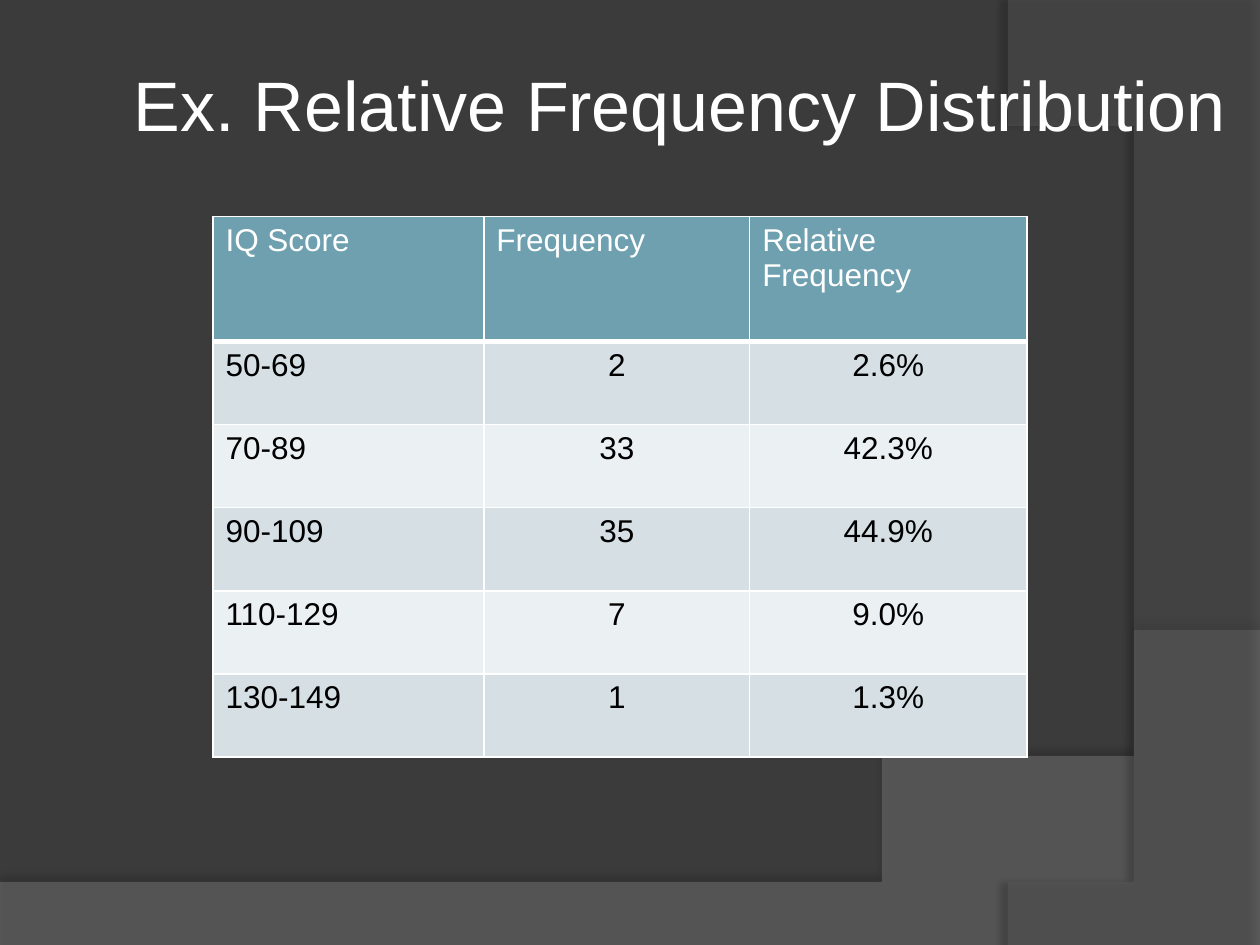
from dataclasses import dataclass

from pptx import Presentation
from pptx.dml.color import RGBColor
from pptx.enum.text import MSO_ANCHOR, MSO_AUTO_SIZE, PP_ALIGN
from pptx.oxml import parse_xml
from pptx.oxml.ns import nsdecls, qn
from pptx.util import Inches, Pt

Point = tuple[float, float]
FONT = "Arial"
WHITE, BLACK = "FFFFFF", "000000"
BACKGROUND = "3B3B3B"
HEADER_FILL = "6EA0B0"
BAND_FILLS = ("D5DFE4", "EBF0F2")
COLUMN_WIDTHS = (2.15, 2.11, 2.2)
HEADER_HEIGHT, ROW_HEIGHT = 0.99, 0.66
ROWS = (
    ("IQ Score", "Frequency", "Relative Frequency"),
    ("50-69", "2", "2.6%"),
    ("70-89", "33", "42.3%"),
    ("90-109", "35", "44.9%"),
    ("110-129", "7", "9.0%"),
    ("130-149", "1", "1.3%"),
)


@dataclass
class Swoosh:
    """A translucent area with one curved edge and a shadow along it."""
    before: list[Point]
    curve: tuple[Point, Point, Point, Point]
    fill: str
    opacity: int
    shadow_opacity: int
    shadow_distance: float
    shadow_angle: int


SWOOSHES = (
    Swoosh([(0, 7.51), (10, 7.51)],
           ((10, 5.2), (5.59, 7.29), (3.91, 7.19), (0, 7.05)),
           "7F7F7F", 45, 35, 3.5, 270),
    Swoosh([(10, 0.02), (10, 7.5)],
           ((8.21, 7.5), (9.35, 6.19), (10.18, 3), (8, 0)),
           "5E5E5E", 40, 45, 4, 180),
)


def rgb(color: str) -> RGBColor:
    return RGBColor.from_string(color)


def bezier(a: Point, b: Point, c: Point, d: Point, steps: int = 60) -> list[Point]:
    """Points along a cubic curve, both ends included."""
    points = []
    for i in range(steps + 1):
        t = i / steps
        u = 1 - t
        weights = (u**3, 3 * u * u * t, 3 * u * t * t, t**3)
        points.append(tuple(sum(w * p[axis] for w, p in zip(weights, (a, b, c, d)))
                            for axis in (0, 1)))
    return points


def add_swoosh(s, swoosh: Swoosh) -> None:
    start, *rest = swoosh.before + bezier(*swoosh.curve)
    builder = s.shapes.build_freeform(*start, scale=Inches(1))
    builder.add_line_segments(rest, close=True)
    sp = builder.convert_to_shape()
    sp.line.fill.background()
    sp.fill.solid()
    sp.fill.fore_color.rgb = rgb(swoosh.fill)
    color = sp.element.spPr.find(qn("a:solidFill"))[0]
    color.append(parse_xml(f'<a:alpha {nsdecls("a")} val="{swoosh.opacity * 1000}"/>'))
    sp.element.spPr.append(parse_xml(
        f'<a:effectLst {nsdecls("a")}><a:outerShdw blurRad="{Pt(4)}" '
        f'dist="{Pt(swoosh.shadow_distance)}" dir="{swoosh.shadow_angle * 60000}" '
        f'algn="ctr" rotWithShape="0"><a:srgbClr val="{BLACK}">'
        f'<a:alpha val="{swoosh.shadow_opacity * 1000}"/></a:srgbClr>'
        f'</a:outerShdw></a:effectLst>'))


def add_run(p, text: str, size: float, color: str) -> None:
    r = p.add_run()
    r.text = text
    r.font.name = FONT
    r.font.size = Pt(size)
    r.font.bold = False
    r.font.color.rgb = rgb(color)


def set_title(s, text: str) -> None:
    title = s.shapes.title
    s.shapes.element.append(title.element)  # in front of the swooshes
    title.left, title.top = Inches(0.96), Inches(0.44)
    title.width, title.height = Inches(8.96), Inches(0.77)
    tf = title.text_frame
    tf.word_wrap = False
    tf.auto_size = MSO_AUTO_SIZE.SHAPE_TO_FIT_TEXT
    tf.vertical_anchor = MSO_ANCHOR.TOP
    p = tf.paragraphs[0]
    p.alignment = PP_ALIGN.LEFT
    add_run(p, text, 40, WHITE)


def set_borders(cell, bottom: float) -> None:
    """White lines of 1 pt, with the bottom one as given."""
    tcPr = cell._tc.get_or_add_tcPr()
    widths = {"lnL": 1, "lnR": 1, "lnT": 1, "lnB": bottom}
    for i, (tag, width) in enumerate(widths.items()):
        tcPr.insert(i, parse_xml(
            f'<a:{tag} {nsdecls("a")} w="{Pt(width)}"><a:solidFill>'
            f'<a:srgbClr val="{WHITE}"/></a:solidFill></a:{tag}>'))


def add_frequency_table(s) -> None:
    heights = [HEADER_HEIGHT] + [ROW_HEIGHT] * (len(ROWS) - 1)
    table = s.shapes.add_table(
        len(ROWS), len(COLUMN_WIDTHS), Inches(1.69), Inches(1.72),
        Inches(sum(COLUMN_WIDTHS)), Inches(sum(heights))).table
    for column, width in zip(table.columns, COLUMN_WIDTHS):
        column.width = Inches(width)
    for i, (texts, height) in enumerate(zip(ROWS, heights)):
        table.rows[i].height = Inches(height)
        header = i == 0
        for j, text in enumerate(texts):
            cell = table.cell(i, j)
            cell.fill.solid()
            cell.fill.fore_color.rgb = rgb(HEADER_FILL if header else BAND_FILLS[(i - 1) % 2])
            set_borders(cell, bottom=3 if header else 1)
            p = cell.text_frame.paragraphs[0]
            p.alignment = PP_ALIGN.LEFT if header or j == 0 else PP_ALIGN.CENTER
            add_run(p, text, 18, WHITE if header else BLACK)


def main() -> None:
    prs = Presentation()
    prs.slide_width, prs.slide_height = Inches(10), Inches(7.5)
    s = prs.slides.add_slide(prs.slide_layouts.get_by_name("Title Only"))
    s.background.fill.solid()
    s.background.fill.fore_color.rgb = rgb(BACKGROUND)
    for swoosh in SWOOSHES:
        add_swoosh(s, swoosh)
    set_title(s, "Ex. Relative Frequency Distribution")
    add_frequency_table(s)
    prs.save("out.pptx")


if __name__ == "__main__":
    main()
